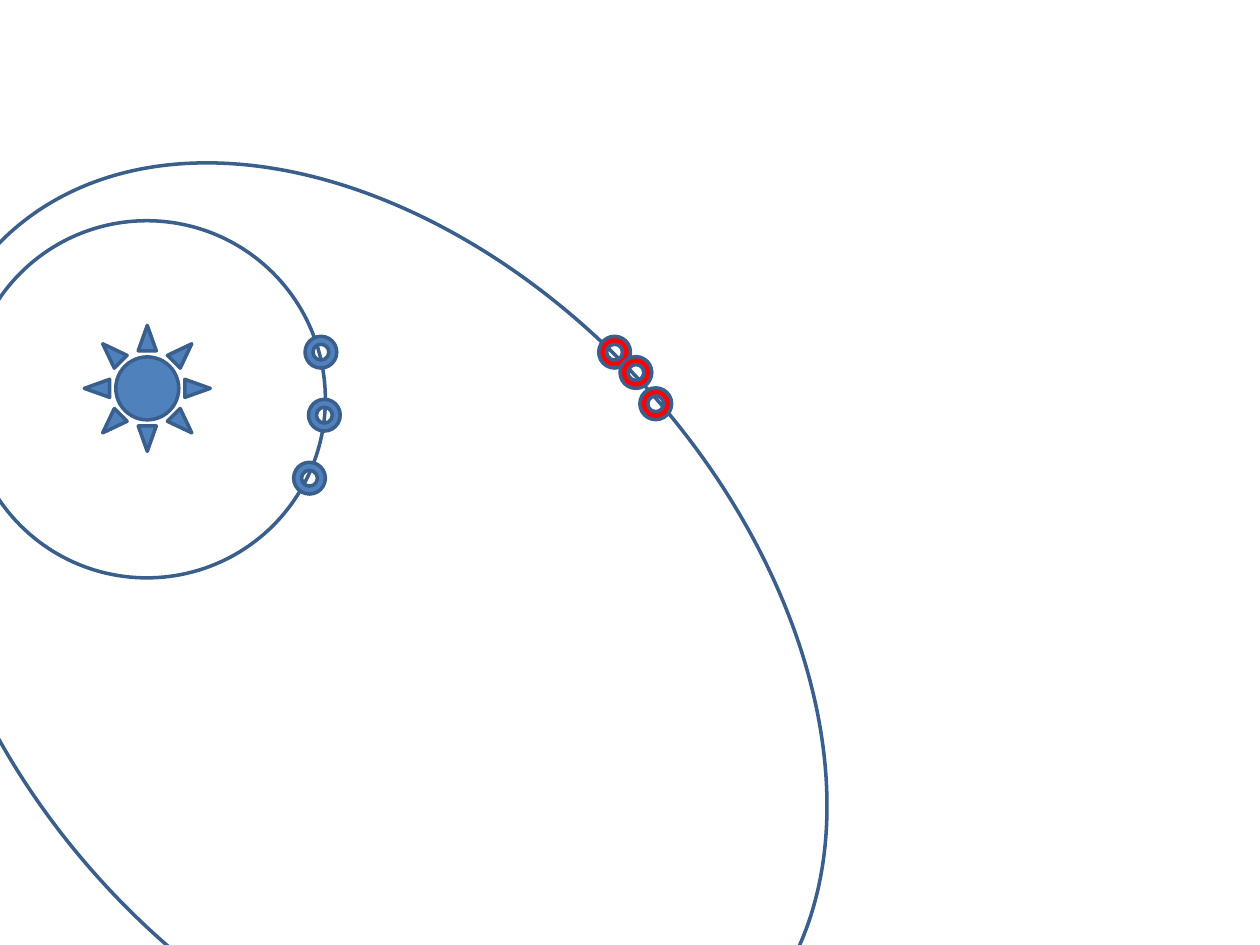
from pptx import Presentation
from pptx.dml.color import RGBColor
from pptx.enum.shapes import MSO_SHAPE
from pptx.util import Cm, Pt

BLUE = RGBColor(0x4F, 0x81, 0xBD)
NAVY = RGBColor(0x3A, 0x5F, 0x8C)
RED = RGBColor(0xFF, 0x00, 0x00)

# Left and top of each body, in cm
INNER = [(6.22, 8.05), (6.15, 6.78), (5.92, 9.32)]
OUTER = [(12.9, 7.82), (12.07, 6.78), (12.5, 7.19)]


class Sky:
    def __init__(self, slide, line=NAVY, width=2, dot=0.64):
        self.slide = slide
        self.line = line
        self.width = Pt(width)
        self.dot = dot

    def shape(self, kind, left, top, wide, high, fill=None):
        item = self.slide.shapes.add_shape(
            kind, Cm(left), Cm(top), Cm(wide), Cm(high))
        item.shadow.inherit = False
        if fill is None:
            item.fill.background()
        else:
            item.fill.solid()
            item.fill.fore_color.rgb = fill
        item.line.color.rgb = self.line
        item.line.width = self.width
        return item

    def sun(self, left, top, size):
        self.shape(MSO_SHAPE.SUN, left, top, size, size, BLUE)

    def orbit(self, left, top, wide, high, turn=0):
        self.shape(MSO_SHAPE.OVAL, left, top, wide, high).rotation = turn

    def bodies(self, spots, fill):
        for left, top in spots:
            self.shape(MSO_SHAPE.DONUT, left, top, self.dot, self.dot, fill)


def main():
    deck = Presentation()
    deck.slide_width, deck.slide_height = Cm(25.4), Cm(19.05)
    blank = deck.slide_layouts[6]
    sky = Sky(deck.slides.add_slide(blank))
    sky.sun(1.7, 6.56, 2.54)
    sky.orbit(-0.64, 4.45, 7.2, 7.2)
    sky.orbit(-3.38, 5.36, 21.8, 14.82, turn=47.8)
    sky.bodies(INNER, BLUE)
    sky.bodies(OUTER, RED)
    deck.save("out.pptx")


if __name__ == "__main__":
    main()
